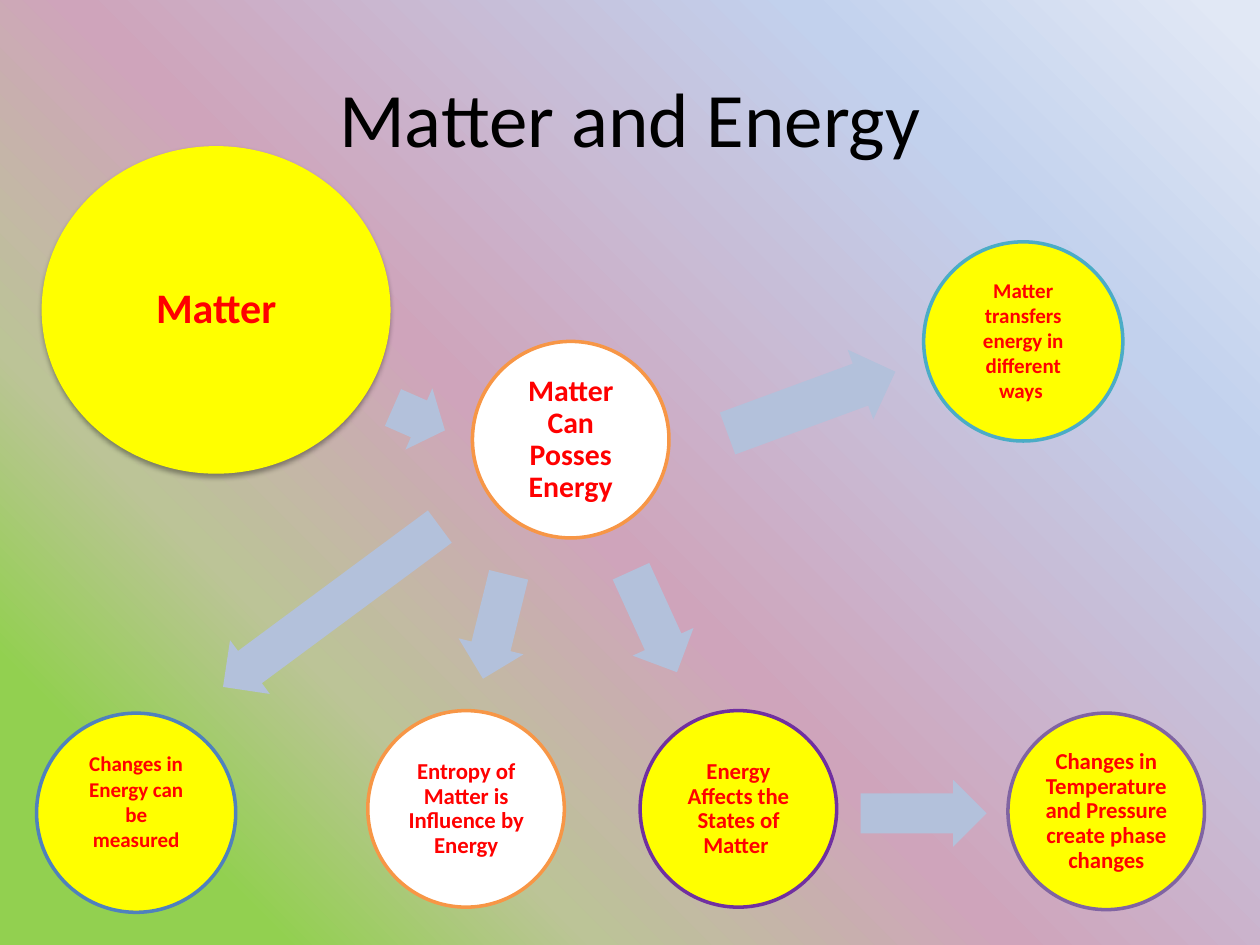
from lxml import etree
from pptx import Presentation
from pptx import util as u
from pptx.dml.color import RGBColor
from pptx.enum import shapes, text
from pptx.oxml import parse_xml
from pptx.oxml.ns import nsdecls, qn

Pt = u.Pt
rgb = RGBColor.from_string


def add_shape(kind, box, fill, line=None):
    sp = s.shapes.add_shape(kind, *[Pt(v) for v in box])
    sp.shadow.inherit = False
    sp.fill.solid()
    sp.fill.fore_color.rgb = rgb(fill)
    if line:
        sp.line.color.rgb = rgb(line)
        sp.line.width = Pt(2)
    else:
        sp.line.fill.background()
    return sp


def add_text(box, words, size, color="FF0000", bold=True, spacing=1.0,
             anchor=text.MSO_ANCHOR.MIDDLE, inset=(7.2, 3.6)):
    tf = s.shapes.add_textbox(*[Pt(v) for v in box]).text_frame
    tf.word_wrap = True
    tf.vertical_anchor = anchor
    tf.margin_left = tf.margin_right = Pt(inset[0])
    tf.margin_top = tf.margin_bottom = Pt(inset[1])
    p = tf.paragraphs[0]
    p.alignment = text.PP_ALIGN.CENTER
    p.line_spacing = spacing
    r = p.add_run()
    r.text = words
    r.font.name = "Calibri"
    r.font.size = Pt(size)
    r.font.bold = bold
    r.font.color.rgb = rgb(color)
    return tf


prs = Presentation()
prs.slide_width, prs.slide_height = Pt(720), Pt(540)
s = prs.slides.add_slide(prs.slide_layouts[6])

fill = s.background.fill
fill.gradient()
fill.gradient_angle = 45
stops = s.background._cSld.find(".//" + qn("a:gsLst"))
for old in list(stops):
    stops.remove(old)
for pos, color in [(13, "92D050"), (27, "BCC497"), (46, "CFA4BB"), (79, "C2D1ED"), (98, "E1E8F5")]:
    gs = etree.SubElement(stops, qn("a:gs"), pos=str(pos * 1000))
    etree.SubElement(gs, qn("a:srgbClr"), val=color)

add_text((36, 21.6, 648, 90), "Matter and Energy", 44, "000000", False)

arrows = [
    (223.2, 220.3, 32.4, 38.2, 23.7),
    (342, 336.2, 63.4, 38.2, 65.5),
    (491.8, 445.7, 72, 38.2, 0),
    (252.7, 339.1, 61.2, 38.2, 103.9),
    (112.3, 327.6, 154.1, 38.2, 143.5),
    (412.6, 208.8, 102.2, 42.5, 339.8),
]
for *box, angle in arrows:
    sp = add_shape(shapes.MSO_SHAPE.RIGHT_ARROW, box, "B3C1DB")
    sp.adjustments[0], sp.adjustments[1] = 0.6, 0.5
    sp.rotation = angle

big, d = (199.4, 187.2), (112.3, 112.3)
circles = [
    (23.8, 83.5, big, "FFFF00", None, "Matter", 24),
    (270, 195.1, d, "FFFFFF", "F79646", "Matter Can Posses Energy", 17),
    (365.8, 406.1, d, "FFFF00", "7030A0", "Energy Affects the States of Matter ", 13),
    (576, 407.5, d, "FFFF00", "8064A2", "Changes in Temperature and Pressure create phase changes", 13),
    (210.2, 406.1, d, "FFFFFF", "F79646", "Entropy of Matter is Influence by Energy", 13),
]
for x, y, (w, h), color, line, words, size in circles:
    sp = add_shape(shapes.MSO_SHAPE.OVAL, (x, y, w, h), color, line)
    if line is None:
        effects = sp._element.spPr.find(qn("a:effectLst"))
        effects.append(parse_xml(
            f'<a:outerShdw {nsdecls("a")} blurRad="{Pt(3.1)}" dist="{Pt(1.8)}" dir="5400000" rotWithShape="0">'
            '<a:srgbClr val="000000"><a:alpha val="35000"/></a:srgbClr></a:outerShdw>'))
    inner = (x + 0.147 * w, y + 0.147 * h, 0.706 * w, 0.706 * h)
    add_text(inner, words, size, spacing=0.9, inset=(1.5, 1.5))

labelled = [
    (527.8, 138.2, "4BACC6", (545.8, 154.8, 77.8, 79.9), "Matter transfers energy in different ways "),
    (20.9, 407.5, "4F81BD", (38.9, 425.5, 77.8, 65.5), "Changes in Energy can be measured"),
]
for x, y, line, box, words in labelled:
    add_shape(shapes.MSO_SHAPE.OVAL, (x, y, 113.8, 113.8), "FFFF00", line)
    tf = add_text(box, words, 12, anchor=text.MSO_ANCHOR.TOP)
    tf.auto_size = text.MSO_AUTO_SIZE.SHAPE_TO_FIT_TEXT

prs.save("out.pptx")
